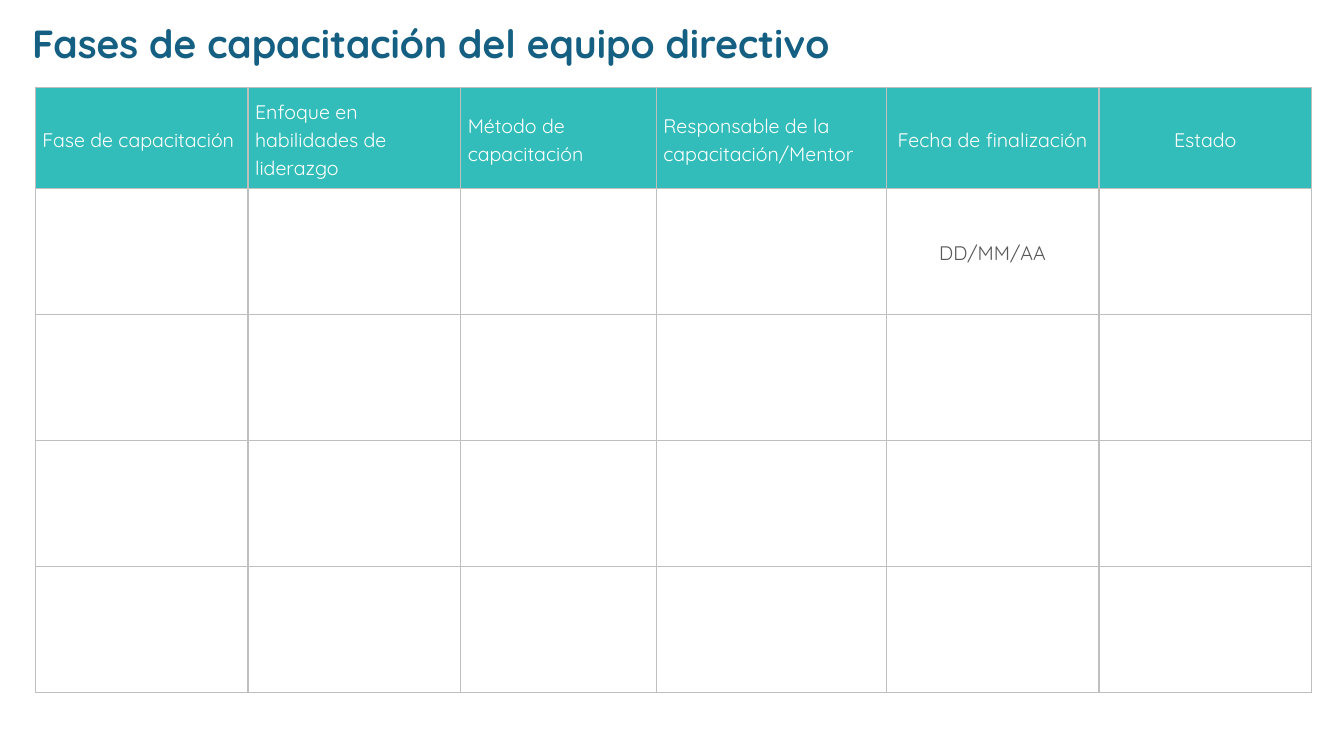
import pptx
import pptx.dml.color
import pptx.enum.text
import pptx.oxml.ns
import pptx.util
from dataclasses import dataclass
from lxml import etree
from pptx.util import Inches


@dataclass(frozen=True)
class Theme:
    font: str = "Quicksand"
    title_color: str = "156082"
    header_fill: str = "33BDBA"
    header_text: str = "FFFFFF"
    body_text: str = "595959"
    border: str = "BFBFBF"
    title_size: int = 28
    table_size: int = 14
    border_width: int = 1


theme = Theme()


def add_run(paragraph, text, size, color, bold=False):
    run = paragraph.add_run()
    run.text = text
    run.font.name = theme.font
    run.font.size = pptx.util.Pt(size)
    run.font.bold = bold
    run.font.color.rgb = pptx.dml.color.RGBColor.from_string(color)


def add_borders(cell):
    properties = cell._tc.get_or_add_tcPr()
    qn = pptx.oxml.ns.qn
    for side in ("a:lnL", "a:lnR", "a:lnT", "a:lnB"):
        line = etree.SubElement(properties, qn(side), w=str(pptx.util.Pt(theme.border_width)))
        fill = etree.SubElement(line, qn("a:solidFill"))
        etree.SubElement(fill, qn("a:srgbClr"), val=theme.border)


presentation = pptx.Presentation()
presentation.slide_width = Inches(13.33)
presentation.slide_height = Inches(7.5)
slide = presentation.slides.add_slide(presentation.slide_layouts[6])

# Title
title = slide.shapes.add_textbox(Inches(0.22), Inches(0.14), Inches(10.29), Inches(0.57))
title.text_frame.word_wrap = True
add_run(title.text_frame.paragraphs[0], "Fases de capacitación del equipo directivo",
        theme.title_size, theme.title_color, bold=True)

# Table content: text by (row, column)
headers = [
    "Fase de capacitación",
    "Enfoque en habilidades de liderazgo",
    "Método de capacitación",
    "Responsable de la capacitación/Mentor",
    "Fecha de finalización",
    "Estado",
]
texts = {(0, column): header for column, header in enumerate(headers)}
texts[1, 4] = "DD/MM/AA"
first_centered_column = 4

# Table grid
column_widths = [2.11, 2.11, 1.94, 2.28, 2.11, 2.11]
row_heights = [1] + [1.25] * 4
table = slide.shapes.add_table(
    len(row_heights), len(column_widths), Inches(0.35), Inches(0.87),
    Inches(sum(column_widths)), Inches(sum(row_heights))).table
table.horz_banding = False
for column, width in zip(table.columns, column_widths):
    column.width = Inches(width)
for row, height in zip(table.rows, row_heights):
    row.height = Inches(height)

# Table cells
for row_index in range(len(row_heights)):
    for column_index in range(len(column_widths)):
        cell = table.cell(row_index, column_index)
        is_header = row_index == 0
        add_borders(cell)
        if is_header:
            cell.fill.solid()
            cell.fill.fore_color.rgb = pptx.dml.color.RGBColor.from_string(theme.header_fill)
        else:
            cell.fill.background()
        cell.vertical_anchor = pptx.enum.text.MSO_ANCHOR.MIDDLE
        cell.margin_left = cell.margin_right = Inches(0.07)
        cell.margin_top = cell.margin_bottom = Inches(0)

        text = texts.get((row_index, column_index))
        if text:
            paragraph = cell.text_frame.paragraphs[0]
            paragraph.line_spacing = 1.15
            paragraph.space_after = pptx.util.Pt(8)
            if column_index >= first_centered_column:
                paragraph.alignment = pptx.enum.text.PP_ALIGN.CENTER
            add_run(paragraph, text, theme.table_size,
                    theme.header_text if is_header else theme.body_text)

presentation.save("out.pptx")
